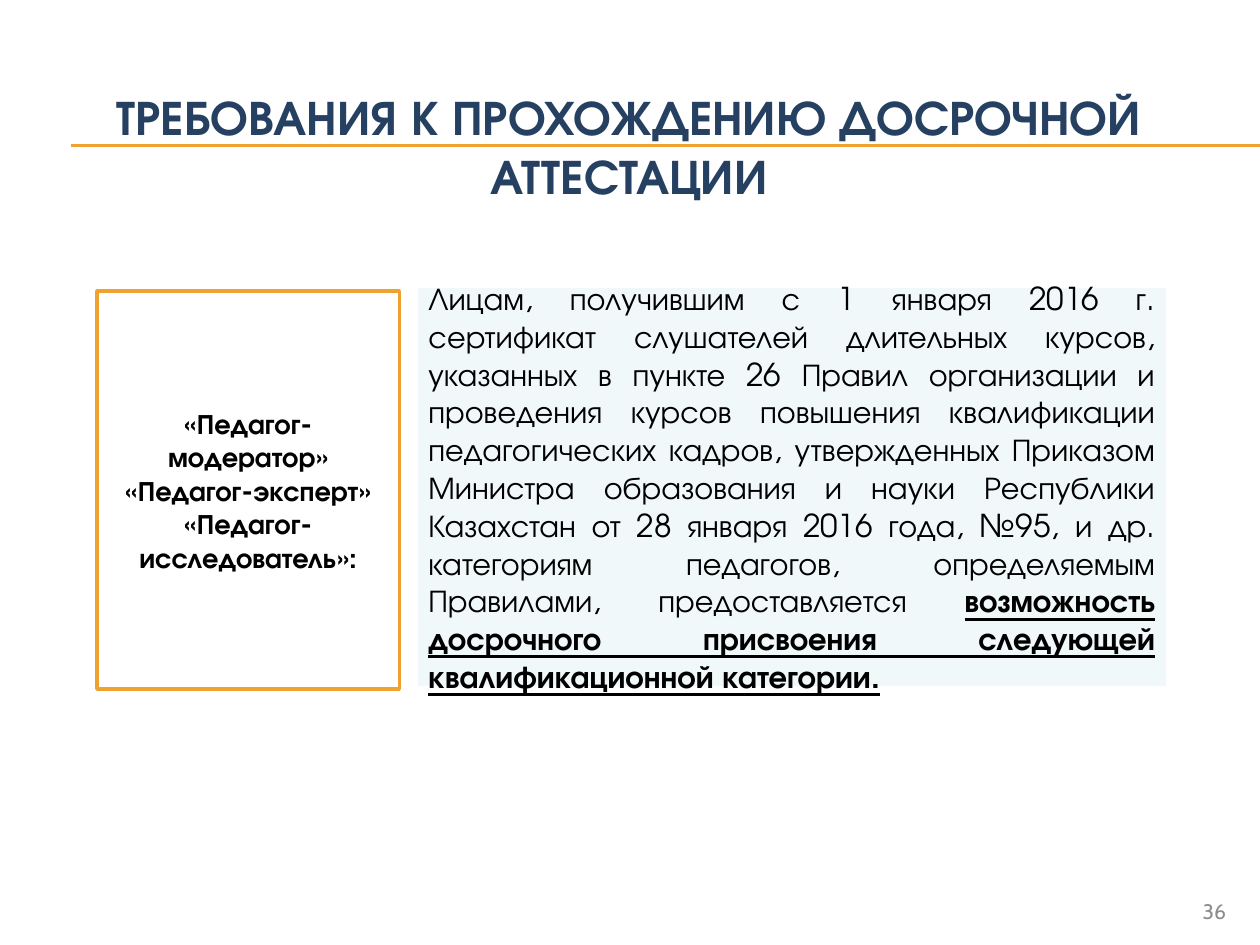
from dataclasses import dataclass

from lxml import etree
from pptx import Presentation
from pptx.dml.color import RGBColor
from pptx.enum import shapes, text
from pptx.oxml import ns
from pptx.util import Inches, Pt


@dataclass(frozen=True)
class Theme:
    """Colours, fonts and type sizes of the deck."""
    navy: str = "254061"
    gold: str = "F0A22E"
    pale: str = "F0F8FA"
    white: str = "FFFFFF"
    black: str = "000000"
    grey: str = "8C8C8C"
    font: str = "TeX Gyre Adventor"
    number_font: str = "Cabin"
    title_size: int = 28
    body_size: int = 18
    label_size: int = 16
    number_size: int = 12
    rule_width: float = 0.75
    border_width: float = 2


THEME = Theme()
TITLE = "ТРЕБОВАНИЯ К ПРОХОЖДЕНИЮ ДОСРОЧНОЙ АТТЕСТАЦИИ"
CATEGORIES = ["«Педагог-модератор»", "«Педагог-эксперт»", "«Педагог-исследователь»:"]
CONDITION = (
    "Лицам, получившим с 1 января 2016 г. сертификат слушателей длительных курсов, "
    "указанных в пункте 26 Правил организации и проведения курсов повышения "
    "квалификации педагогических кадров, утвержденных Приказом Министра образования "
    "и науки Республики Казахстан от 28 января 2016 года, №95, и др. категориям "
    "педагогов, определяемым Правилами, предоставляется "
)
RIGHT = "возможность досрочного присвоения следующей квалификационной категории."


def place(shape, box):
    """Move a shape to a box of left, top, width and height in inches."""
    shape.left, shape.top, shape.width, shape.height = map(Inches, box)


def paint(shape, fill, line):
    """Give a shape a solid fill and a border."""
    shape.fill.solid()
    shape.fill.fore_color.rgb = RGBColor.from_string(fill)
    shape.line.color.rgb = RGBColor.from_string(line)
    shape.line.width = Pt(THEME.border_width)


def set_frame(frame, anchor):
    """Wrap the text at a fixed size and anchor it."""
    frame.word_wrap = True
    frame.auto_size = text.MSO_AUTO_SIZE.NONE
    frame.vertical_anchor = anchor


def style(para, size, color, align, bold=False, font=THEME.font):
    """Set the alignment and font of a paragraph."""
    para.alignment = align
    para.font.size = Pt(size)
    para.font.name = font
    para.font.bold = bold
    para.font.color.rgb = RGBColor.from_string(color)


def add_rules(page, left, right, tops):
    """Draw the thin gold rules behind the title."""
    for order, top in enumerate(tops, start=2):
        rule = page.shapes.add_connector(
            shapes.MSO_CONNECTOR.STRAIGHT, Inches(left), Inches(top), Inches(right), Inches(top))
        rule.line.color.rgb = RGBColor.from_string(THEME.gold)
        rule.line.width = Pt(THEME.rule_width)
        etree.SubElement(rule._element.spPr, ns.qn("a:effectLst"))
        page.shapes._spTree.insert(order, rule._element)


def fill_title(page, box):
    """Place the title."""
    title = page.shapes.title
    place(title, box)
    set_frame(title.text_frame, text.MSO_ANCHOR.MIDDLE)
    para = title.text_frame.paragraphs[0]
    para.text = TITLE
    style(para, THEME.title_size, THEME.navy, text.PP_ALIGN.CENTER, bold=True)


def fill_condition(page, box):
    """Place the justified body text with its underlined ending."""
    body = page.placeholders[1]
    place(body, box)
    paint(body, THEME.pale, THEME.white)
    set_frame(body.text_frame, text.MSO_ANCHOR.MIDDLE)
    para = body.text_frame.paragraphs[0]
    style(para, THEME.body_size, THEME.black, text.PP_ALIGN.JUSTIFY)
    properties = para._p.get_or_add_pPr()
    properties.set("marL", "0")
    properties.set("indent", "0")
    properties.insert_element_before(
        etree.Element(ns.qn("a:buNone")), "a:tabLst", "a:defRPr", "a:extLst")
    para.add_run().text = CONDITION
    span = para.add_run()
    span.text = RIGHT
    span.font.bold = span.font.underline = True


def add_categories(page, box):
    """Draw the framed list of teacher categories."""
    panel = page.shapes.add_shape(shapes.MSO_SHAPE.RECTANGLE, *map(Inches, box))
    panel.shadow.inherit = False
    paint(panel, THEME.white, THEME.gold)
    frame = panel.text_frame
    set_frame(frame, text.MSO_ANCHOR.MIDDLE)
    frame.text = "\n".join(CATEGORIES)
    for para in frame.paragraphs:
        style(para, THEME.label_size, THEME.black, text.PP_ALIGN.CENTER, bold=True)


def add_number(page, box, number):
    """Write the page number."""
    label = page.shapes.add_textbox(*map(Inches, box))
    set_frame(label.text_frame, text.MSO_ANCHOR.TOP)
    para = label.text_frame.paragraphs[0]
    para.text = str(number)
    style(para, THEME.number_size, THEME.grey, text.PP_ALIGN.RIGHT, font=THEME.number_font)


def main():
    """Build and save the deck."""
    deck = Presentation()
    deck.slide_width, deck.slide_height = Inches(10), Inches(7.5)
    page = deck.slides.add_slide(deck.slide_layouts[1])
    add_rules(page, 0.56, 10, (1.15, 1.16))
    fill_title(page, (0.49, 0.96, 9, 0.39))
    fill_condition(page, (3.3, 2.27, 5.97, 3.19))
    add_number(page, (9, 7.08, 0.83, 0.27), 36)
    add_categories(page, (0.77, 2.31, 2.4, 3.16))
    deck.save("out.pptx")


if __name__ == "__main__":
    main()
